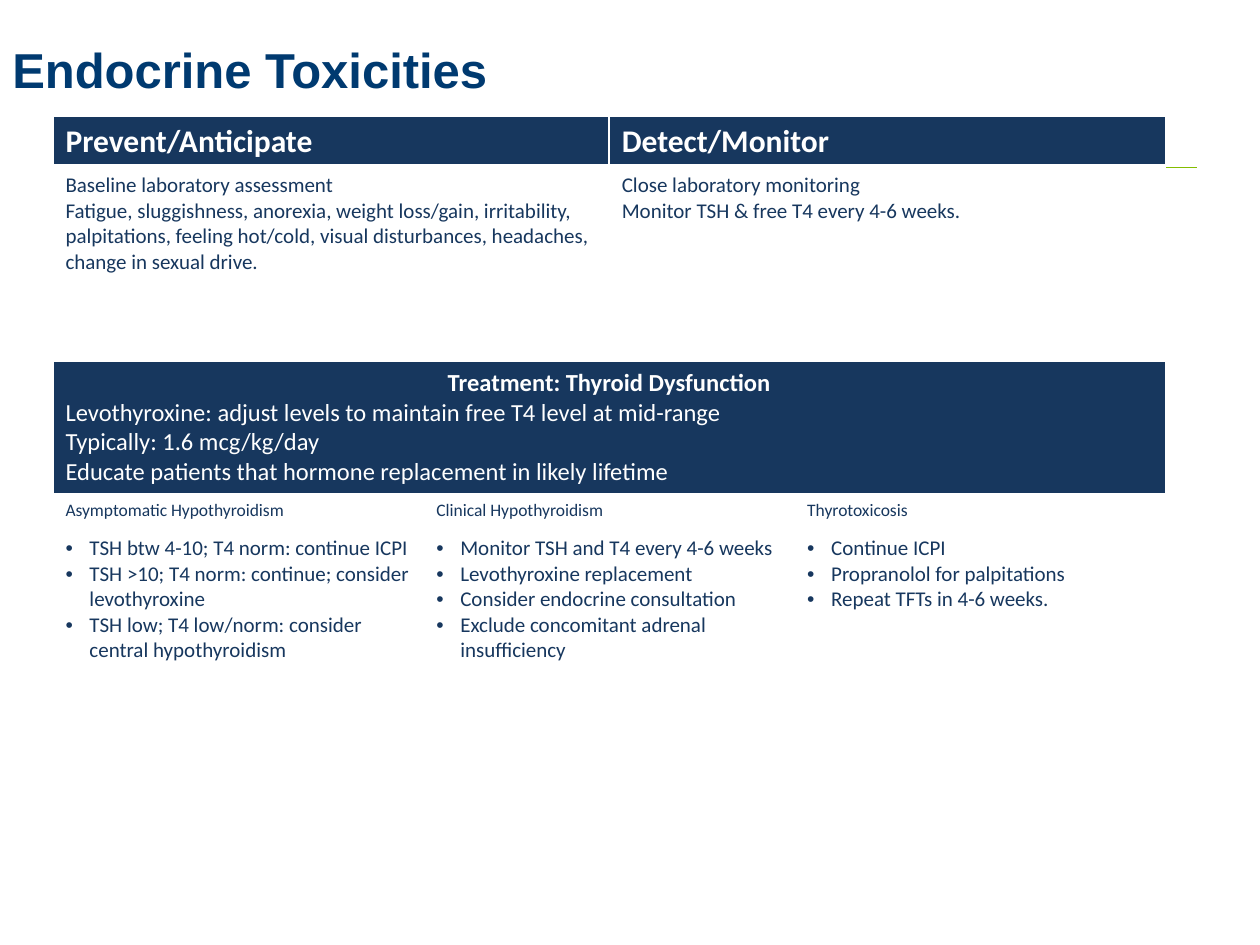
from dataclasses import dataclass
from lxml.etree import SubElement
from pptx import Presentation
from pptx.dml.color import RGBColor as RGB
from pptx.enum.shapes import MSO_CONNECTOR as CONN
from pptx.enum.text import MSO_ANCHOR as ANCHOR, PP_ALIGN as ALIGN
from pptx.oxml.ns import qn
from pptx.util import Inches, Pt


@dataclass(frozen=True)
class Theme:
    navy: str = "17375E"
    title: str = "003A70"
    green: str = "84BD00"
    white: str = "FFFFFF"
    head_font: str = "Arial"
    body_font: str = "Calibri"
    title_size: int = 28
    header_size: int = 18
    band_size: int = 14
    body_size: int = 12
    label_size: int = 10


class Deck:
    def __init__(self, prs, theme):
        self.theme = theme
        self.s = prs.slides.add_slide(prs.slide_layouts[6])

    def add_text(self, p, text, color, **fmt):
        r = p.add_run()
        r.text = text
        for name, value in {"name": self.theme.body_font, "bold": False, **fmt}.items():
            setattr(r.font, name, value)
        r.font.color.rgb = RGB.from_string(color)

    def title(self, text, *box):
        t = self.theme
        tf = self.s.shapes.add_textbox(*map(Inches, box)).text_frame
        for name, value in {"word_wrap": True, "vertical_anchor": ANCHOR.MIDDLE}.items():
            setattr(tf, name, value)
        self.add_text(tf.paragraphs[0], text, t.title, name=t.head_font,
                      size=Pt(t.title_size), bold=True)

    def rule(self, x1, x2, y):
        ln = self.s.shapes.add_connector(CONN.STRAIGHT, *map(Inches, (x1, y, x2, y)))
        ln.line.color.rgb = RGB.from_string(self.theme.green)
        ln.line.width = Pt(0.75)
        SubElement(ln._element.spPr, qn("a:effectLst"))

    def table(self, x, y, widths, heights):
        box = map(Inches, (x, y, sum(widths), sum(heights)))
        table = self.s.shapes.add_table(len(heights), len(widths), *box).table
        table.first_row = table.horz_banding = False
        for col, w in zip(table.columns, widths):
            col.width = Inches(w)
        for i, (row, h) in enumerate(zip(table.rows, heights)):
            row.height = Inches(h)
            for c in row.cells:
                self.borders(c, top=3 if i == 1 else 1, bottom=3 if i == 0 else 1)
                self.fill(c, self.theme.white)
        return table

    def borders(self, cell, top, bottom):
        tc_pr = cell._tc.get_or_add_tcPr()
        for side, width in {"L": 1, "R": 1, "T": top, "B": bottom}.items():
            ln = SubElement(tc_pr, qn(f"a:ln{side}"), w=str(Pt(width)))
            fill = SubElement(ln, qn("a:solidFill"))
            SubElement(fill, qn("a:srgbClr"), val=self.theme.white)

    def fill(self, cell, color):
        cell.fill.solid()
        cell.fill.fore_color.rgb = RGB.from_string(color)

    def cell(self, table, row, first, last, lines, size, dark=False, bold=False,
             bullets=False, heading=None):
        t = self.theme
        c = table.cell(row, first)
        if last > first:
            c.merge(table.cell(row, last))
        if dark:
            for col in range(first, last + 1):
                self.fill(table.cell(row, col), t.navy)
        tf = c.text_frame
        color = t.white if dark else t.navy
        for i, text in enumerate(([heading] if heading else []) + lines):
            p = tf.paragraphs[0] if i == 0 else tf.add_paragraph()
            is_heading = text == heading
            p.alignment = ALIGN.CENTER if is_heading else ALIGN.LEFT
            if bullets:
                self.bullet(p)
            self.add_text(p, text, color, size=Pt(size), bold=bold or is_heading)

    def bullet(self, p):
        p_pr = p._p.get_or_add_pPr()
        indent = Inches(0.19)
        p_pr.set("marL", str(indent))
        p_pr.set("indent", str(-indent))
        SubElement(p_pr, qn("a:buFont"), typeface="Arial")
        SubElement(p_pr, qn("a:buChar"), char="•")


HALVES = [
    ("Prevent/Anticipate", [
        "Baseline laboratory assessment",
        "Fatigue, sluggishness, anorexia, weight loss/gain, irritability, palpitations, "
        "feeling hot/cold, visual disturbances, headaches, change in sexual drive."]),
    ("Detect/Monitor", [
        "Close laboratory monitoring",
        "Monitor TSH & free T4 every 4-6 weeks."]),
]
TREATMENT = [
    "Levothyroxine: adjust levels to maintain free T4 level at mid-range",
    "Typically: 1.6 mcg/kg/day",
    "Educate patients that hormone replacement in likely lifetime",
]
CONDITIONS = [
    ("Asymptomatic Hypothyroidism", [
        "TSH btw 4-10; T4 norm: continue ICPI",
        "TSH >10; T4 norm: continue; consider levothyroxine",
        "TSH low; T4 low/norm: consider central hypothyroidism"]),
    ("Clinical Hypothyroidism", [
        "Monitor TSH and T4 every 4-6 weeks",
        "Levothyroxine replacement",
        "Consider endocrine consultation",
        "Exclude concomitant adrenal insufficiency"]),
    ("Thyrotoxicosis", [
        "Continue ICPI",
        "Propranolol for palpitations",
        "Repeat TFTs in 4-6 weeks."]),
]


def main():
    prs = Presentation()
    prs.slide_width, prs.slide_height = Inches(10), Inches(7.5)
    t = Theme()
    deck = Deck(prs, t)
    deck.rule(0.5, 9.5, 1.33)
    deck.title("Endocrine Toxicities", 0, 0.17, 7, 0.75)

    third = 8.83 / 3
    table = deck.table(0.42, 0.92, [third, third / 2, third / 2, third],
                       [0.39, 1.55, 1.05, 0.28, 1.23])
    for (head, lines), span in zip(HALVES, [(0, 1), (2, 3)]):
        deck.cell(table, 0, *span, [head], t.header_size, dark=True, bold=True)
        deck.cell(table, 1, *span, lines, t.body_size)
    deck.cell(table, 2, 0, 3, TREATMENT, t.band_size, dark=True,
              heading="Treatment: Thyroid Dysfunction")
    for (label, lines), span in zip(CONDITIONS, [(0, 0), (1, 2), (3, 3)]):
        deck.cell(table, 3, *span, [label], t.label_size)
        deck.cell(table, 4, *span, lines, t.body_size, bullets=True)
    prs.save("out.pptx")


if __name__ == "__main__":
    main()
